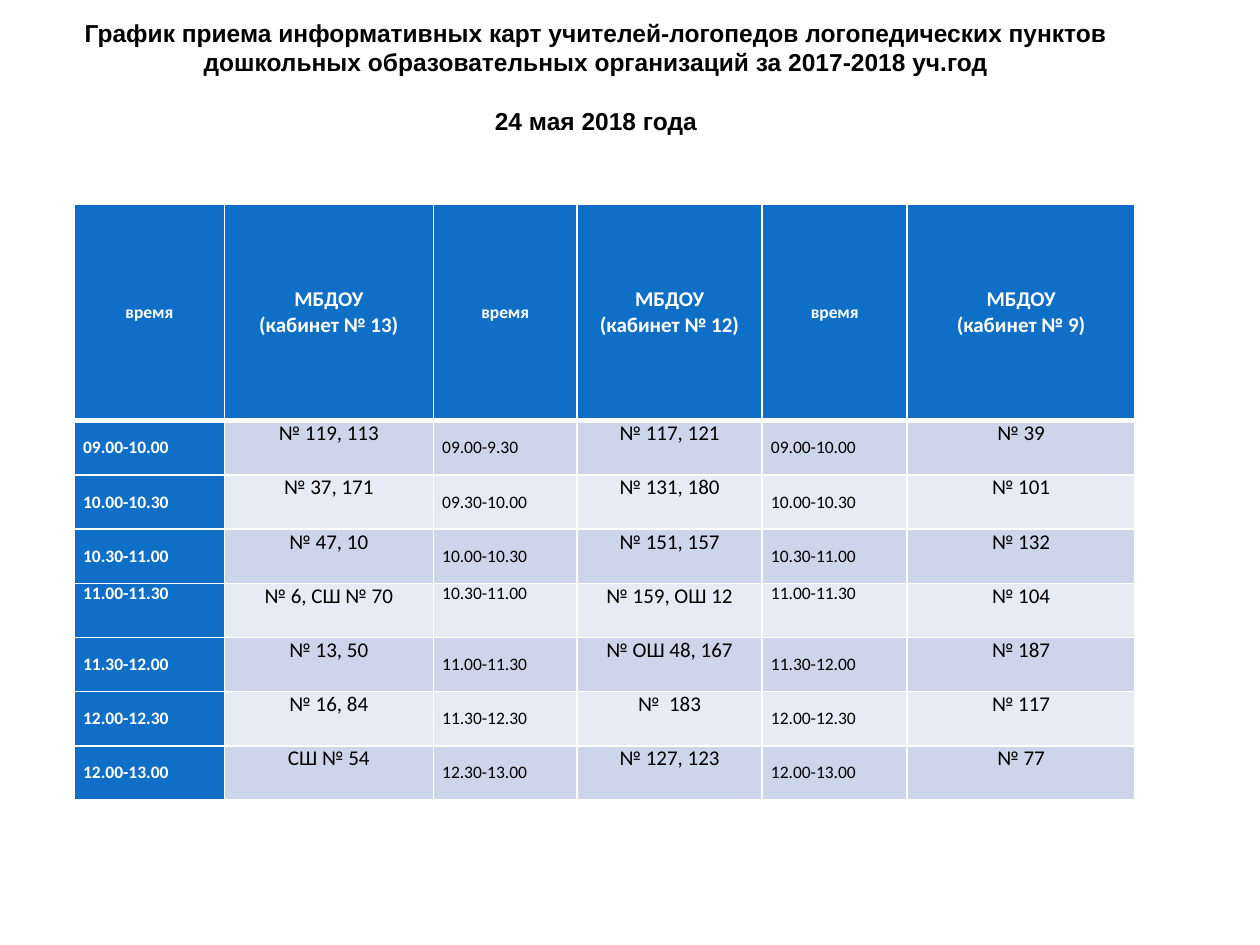
"""Build the slide with the schedule for handing in speech therapists' cards."""
from lxml.etree import SubElement
from pptx import Presentation
from pptx.dml.color import RGBColor
from pptx.enum.text import MSO_ANCHOR, MSO_AUTO_SIZE, PP_ALIGN
from pptx.oxml.ns import qn
from pptx.util import Inches, Pt

BLUE = RGBColor(0x0F, 0x6F, 0xC6)
DARK = RGBColor(0xCC, 0xD5, 0xEA)
LIGHT = RGBColor(0xE7, 0xEB, 0xF5)
WHITE = RGBColor(0xFF, 0xFF, 0xFF)
BLACK = RGBColor(0x00, 0x00, 0x00)

TITLE = [
    "График приема информативных карт учителей-логопедов логопедических пунктов",
    "дошкольных образовательных организаций за 2017-2018 уч.год",
    "24 мая 2018 года",
]
ROOMS = [13, 12, 9]
SLOTS = [
    ["09.00-10.00", "№ 119, 113", "09.00-9.30", "№ 117, 121", "09.00-10.00", "№ 39"],
    ["10.00-10.30", "№ 37, 171", "09.30-10.00", "№ 131, 180", "10.00-10.30", "№ 101"],
    ["10.30-11.00", "№ 47, 10", "10.00-10.30", "№ 151, 157", "10.30-11.00", "№ 132"],
    ["11.00-11.30", "№ 6, СШ № 70", "10.30-11.00", "№ 159, ОШ 12", "11.00-11.30", "№ 104"],
    ["11.30-12.00", "№ 13, 50", "11.00-11.30", "№ ОШ 48, 167", "11.30-12.00", "№ 187"],
    ["12.00-12.30", "№ 16, 84", "11.30-12.30", "№  183", "12.00-12.30", "№ 117"],
    ["12.00-13.00", "СШ № 54", "12.30-13.00", "№ 127, 123", "12.00-13.00", "№ 77"],
]
WIDTHS = [1.19, 1.66, 1.14, 1.47, 1.15, 1.81]
HEAD_HEIGHT, SLOT_HEIGHT = 1.72, 0.43
HIGH_ROW = 4


def style(para, font, size, bold, color, align):
    """Set the look of one paragraph."""
    para.alignment = align
    para.font.name, para.font.size = font, Pt(size)
    para.font.bold = bold
    para.font.color.rgb = color


def edge(cell, side, width):
    """Draw one white border of a cell."""
    line = SubElement(cell._tc.get_or_add_tcPr(), qn(f"a:ln{side}"), w=str(Pt(width)))
    fill = SubElement(line, qn("a:solidFill"))
    SubElement(fill, qn("a:srgbClr"), val=str(WHITE))


deck = Presentation()
deck.slide_width, deck.slide_height = Inches(10), Inches(7.5)
slide = deck.slides.add_slide(deck.slide_layouts.get_by_name("Title Only"))

title = slide.shapes.title
title.left, title.top = Inches(-0.29), Inches(0.09)
title.width, title.height = Inches(10.04), Inches(1.35)
frame = title.text_frame
frame.text = "\n".join(TITLE)
frame.word_wrap = True
frame.auto_size = MSO_AUTO_SIZE.NONE
frame.vertical_anchor = MSO_ANCHOR.TOP
for para in frame.paragraphs:
    style(para, "Arial", 14, True, BLACK, PP_ALIGN.CENTER)
date = frame.paragraphs[-1]
date.space_before = Pt(17)

heads = []
for room in ROOMS:
    heads += ["время", f"МБДОУ\n(кабинет № {room})"]
rows = [heads] + SLOTS
heights = [HEAD_HEIGHT] + [SLOT_HEIGHT] * len(SLOTS)

table = slide.shapes.add_table(
    len(rows), len(WIDTHS), Inches(0.59), Inches(1.62),
    Inches(sum(WIDTHS)), Inches(sum(heights))).table
table.first_col = True
for column, width in zip(table.columns, WIDTHS):
    column.width = Inches(width)
for row, height in zip(table.rows, heights):
    row.height = Inches(height)

for r, texts in enumerate(rows):
    is_head = r == 0
    band = DARK if r % 2 else LIGHT
    for c, text in enumerate(texts):
        is_time = c % 2 == 0
        strong = is_head or c == 0
        middle = is_head or (is_time and r != HIGH_ROW)

        cell = table.cell(r, c)
        for side in "LRTB":
            below_head = (r, side) in [(0, "B"), (1, "T")]
            edge(cell, side, 3 if below_head else 1)
        cell.fill.solid()
        cell.fill.fore_color.rgb = BLUE if strong else band
        cell.margin_left = cell.margin_right = Inches(0.07)
        cell.margin_top = cell.margin_bottom = 0
        cell.vertical_anchor = MSO_ANCHOR.MIDDLE if middle else MSO_ANCHOR.TOP

        cell.text = text
        size = 10 if is_time else 12
        color = WHITE if strong else BLACK
        align = PP_ALIGN.LEFT if is_time and not is_head else PP_ALIGN.CENTER
        for para in cell.text_frame.paragraphs:
            style(para, "Calibri", size, strong, color, align)

deck.save("out.pptx")
